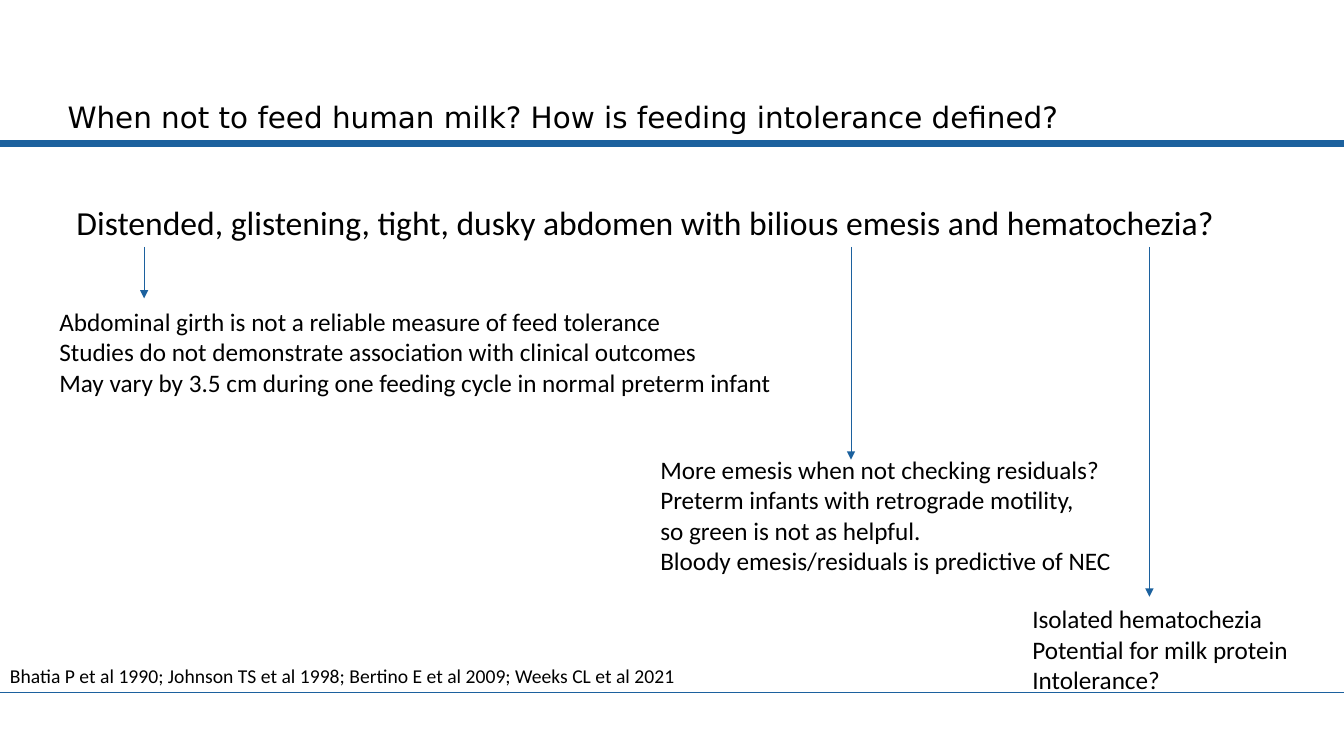
from dataclasses import dataclass

from pptx import Presentation
from pptx.dml.color import RGBColor
from pptx.enum.shapes import MSO_CONNECTOR as Connector
from pptx.enum.text import MSO_ANCHOR as Anchor, MSO_AUTO_SIZE as AutoSize, PP_ALIGN as Align
from pptx.oxml.ns import qn
from pptx.oxml.xmlchemy import OxmlElement
from pptx.slide import Slide
from pptx.text.text import TextFrame
from pptx.util import Emu, Pt

EMU_PER_PX = 9144  # 100 px to the inch
WIDTH, HEIGHT = 1333, 750
BLUE, BLACK = "1C619E", "000000"
ARROW_TOP = 245


@dataclass
class Note:
    left: int
    top: int
    width: int
    height: int
    size: int
    lines: list[str]


@dataclass
class Rule:
    left: int
    top: int
    right: int
    bottom: int
    weight: float
    arrow: bool = False


TITLE = Note(57, 40, 1225, 99, 21, [
    "When not to feed human milk? How is feeding intolerance defined?"])

NOTES = [
    Note(66, 195, 1159, 50, 24, [
        "Distended, glistening, tight, dusky abdomen with bilious emesis and hematochezia?"]),
    Note(49, 299, 734, 101, 18, [
        "Abdominal girth is not a reliable measure of feed tolerance",
        "Studies do not demonstrate association with clinical outcomes",
        "May vary by 3.5 cm during one feeding cycle in normal preterm infant"]),
    Note(645, 446, 478, 131, 18, [
        "More emesis when not checking residuals?",
        "Preterm infants with retrograde motility,",
        "so green is not as helpful.",
        "Bloody emesis/residuals is predictive of NEC"]),
    Note(1014, 594, 277, 101, 18, [
        "Isolated hematochezia",
        "Potential for milk protein",
        "Intolerance?"]),
    Note(0, 654, 691, 34, 14, [
        "Bhatia P et al 1990; Johnson TS et al 1998; Bertino E et al 2009; Weeks CL et al 2021"]),
]

BORDERS = [Rule(0, 687, WIDTH, 687, 1), Rule(0, 142, WIDTH, 142, 5)]
ARROWS = [Rule(x, ARROW_TOP, x, bottom, 0.5, arrow=True)
          for x, bottom in ((143, 296), (844, 456), (1140, 592))]


def px(value: int) -> Emu:
    return Emu(value * EMU_PER_PX)


def color(value: str) -> RGBColor:
    return RGBColor.from_string(value)


def apply(target: object, formats: dict) -> None:
    for name, value in formats.items():
        setattr(target, name, value)


def write(frame: TextFrame, note: Note, font_name: str, spacing: float) -> None:
    frame.text = "\n".join(note.lines)
    for paragraph in frame.paragraphs:
        apply(paragraph, {"alignment": Align.LEFT, "line_spacing": spacing})
        for run in paragraph.runs:
            apply(run.font, {"name": font_name, "size": Pt(note.size)})
            run.font.color.rgb = color(BLACK)


def add_title(slide: Slide, note: Note) -> None:
    title = slide.shapes.title
    apply(title, {"left": px(note.left), "top": px(note.top),
                  "width": px(note.width), "height": px(note.height)})
    apply(title.text_frame, {"vertical_anchor": Anchor.BOTTOM, "word_wrap": True,
                             "auto_size": AutoSize.NONE})
    write(title.text_frame, note, "DejaVu Sans", 0.9)


def add_note(slide: Slide, note: Note) -> None:
    box = slide.shapes.add_textbox(*map(px, (note.left, note.top, note.width, note.height)))
    apply(box.text_frame, {"word_wrap": False, "auto_size": AutoSize.SHAPE_TO_FIT_TEXT})
    write(box.text_frame, note, "Calibri", 1.0)


def add_rule(slide: Slide, rule: Rule) -> None:
    connector = slide.shapes.add_connector(
        Connector.STRAIGHT, *map(px, (rule.left, rule.top, rule.right, rule.bottom)))
    connector.line.width = Pt(rule.weight)
    connector.line.color.rgb = color(BLUE)
    if rule.arrow:
        head = OxmlElement("a:tailEnd")
        head.set("type", "triangle")
        connector.line._get_or_add_ln().append(head)
    connector._element.find(qn("p:spPr")).append(OxmlElement("a:effectLst"))


def main() -> None:
    presentation = Presentation()
    apply(presentation, {"slide_width": px(WIDTH), "slide_height": px(HEIGHT)})
    slide = presentation.slides.add_slide(presentation.slide_layouts[5])

    # Heading and the borders above and below the content
    add_title(slide, TITLE)
    for border in BORDERS:
        add_rule(slide, border)

    # Question, its answers and the references
    for note in NOTES:
        add_note(slide, note)

    # Arrows from the question's terms to the answers
    for arrow in ARROWS:
        add_rule(slide, arrow)

    presentation.save("out.pptx")


if __name__ == "__main__":
    main()
